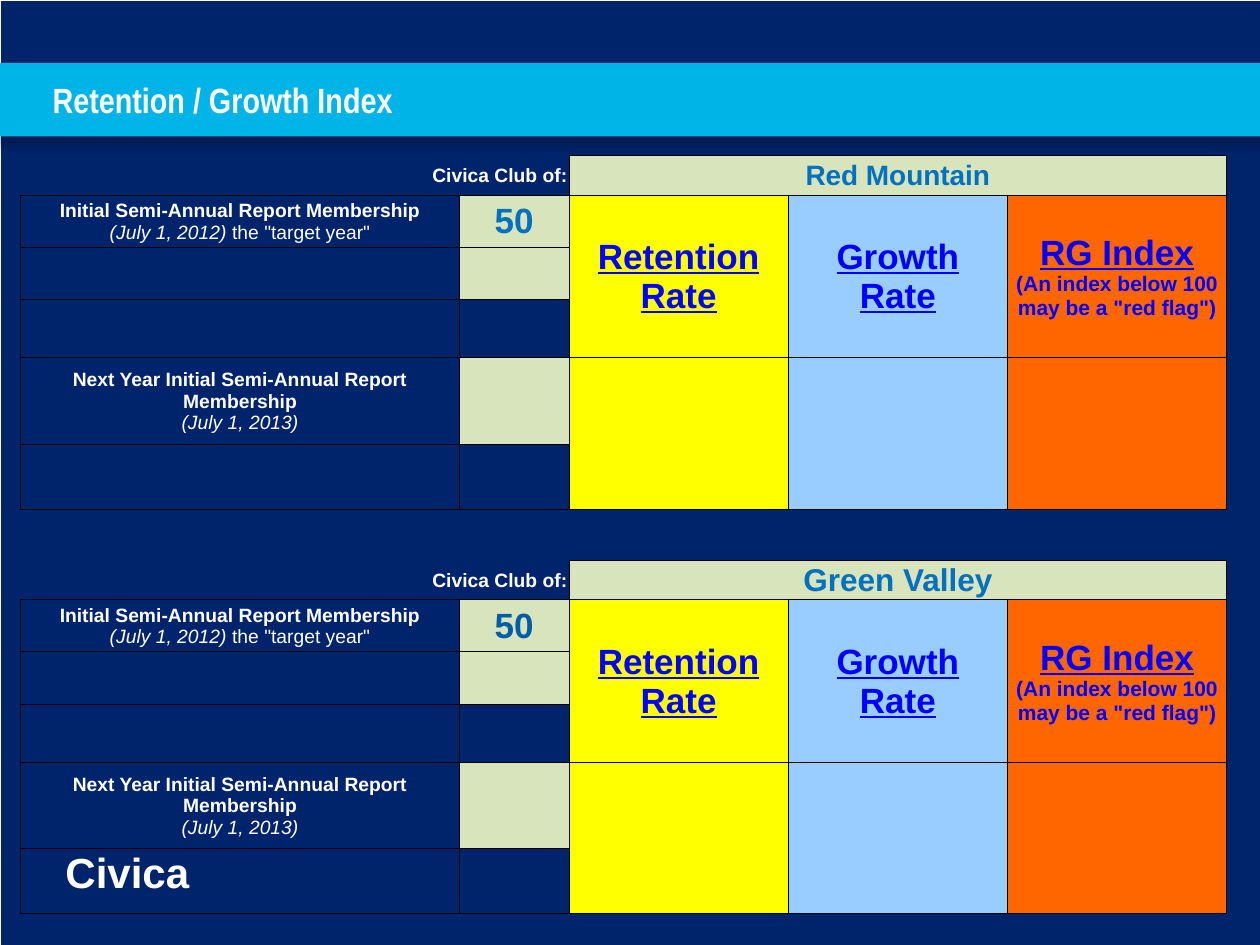
"""Build the Retention / Growth Index slide with one table for two clubs."""
from lxml import etree
from pptx import Presentation
from pptx import util as u
from pptx.dml import color
from pptx.enum import shapes, text
from pptx.oxml import ns

COLORS = {"navy": "00246C", "sky": "01B4E7", "white": "FFFFFF", "black": "000000",
          "green": "D7E4BC", "yellow": "FFFF00", "pale": "99CCFF", "orange": "FF6600",
          "blue": "0070C0", "royal": "005DAA", "link": "0000FF"}

STYLES = {
    "title": dict(name="Arial Narrow", size=20, bold=True, color="white"),
    "wordmark": dict(size=24, bold=True, color="white"),
    "label": dict(size=11, bold=True, color="white"),
    "date": dict(size=11, italic=True, color="white"),
    "plain": dict(size=11, color="white"),
    "measure": dict(size=20, bold=True, underline=True, color="link"),
    "warning": dict(size=12, bold=True, color="link"),
}

CLUBS = [
    dict(row=1, club="Red Mountain", club_size=16, members="50", members_color="blue"),
    dict(row=9, club="Green Valley", club_size=18, members="50", members_color="royal"),
]
CLUB_LABEL = [[("Civica Club of:", "label")]]
FIRST_YEAR = [[("Initial Semi-Annual Report Membership\n", "label"),
               ("(July 1, 2012) ", "date"), ("the \"target year\"", "plain")]]
NEXT_YEAR = [[("Next Year Initial Semi-Annual Report Membership\n", "label"),
              ("(July 1, 2013)", "date")]]
MEASURES = [
    ("yellow", [[("Retention Rate", "measure")]]),
    ("pale", [[("Growth", "measure")], [("Rate", "measure")]]),
    ("orange", [[("RG Index\n", "measure"),
                 ("(An index below 100\nmay be a \"red flag\")", "warning")]]),
]

YEAR_ROWS = [1.05, 1.05, 1.17, 1.75, 1.31]
ROWS = [1.23, 0.79, *YEAR_ROWS, 0.51, 0.52, 0.8, *YEAR_ROWS]
COLUMNS = [2.21] * 11
SIDES = {"l": "a:lnL", "r": "a:lnR", "t": "a:lnT", "b": "a:lnB"}
CELL_FORMAT = dict(vertical_anchor=text.MSO_ANCHOR.MIDDLE, margin_left=u.Cm(0.03),
                   margin_right=u.Cm(0.03), margin_top=u.Cm(0.03), margin_bottom=0)
FRAME_FORMAT = dict(margin_left=0, margin_right=0, margin_top=0, margin_bottom=0,
                    word_wrap=True, auto_size=text.MSO_AUTO_SIZE.NONE,
                    vertical_anchor=text.MSO_ANCHOR.MIDDLE)


def rgb(name):
    return color.RGBColor.from_string(COLORS[name])


def set_all(target, values):
    for attribute, value in values.items():
        setattr(target, attribute, value)


def write(frame, paragraphs, align):
    for index, runs in enumerate(paragraphs):
        paragraph = frame.add_paragraph() if index else frame.paragraphs[0]
        paragraph.alignment = align
        for words, style in runs:
            values = dict(name="Arial", bold=False, italic=False, underline=False)
            values.update(STYLES[style] if isinstance(style, str) else style)
            ink = values.pop("color")
            values["size"] = u.Pt(values["size"])
            for position, line in enumerate(words.split("\n")):
                if position:
                    paragraph.add_line_break()
                if line:
                    run = paragraph.add_run()
                    run.text = line
                    set_all(run.font, values)
                    run.font.color.rgb = rgb(ink)


def set_borders(cell, drawn):
    properties = cell._tc.get_or_add_tcPr()
    for position, (side, tag) in enumerate(SIDES.items()):
        line = etree.Element(ns.qn(tag), w=str(u.Pt(0.5)))
        if side in drawn:
            fill = etree.SubElement(line, ns.qn("a:solidFill"))
            etree.SubElement(fill, ns.qn("a:srgbClr"), val=COLORS["black"])
        else:
            etree.SubElement(line, ns.qn("a:noFill"))
        properties.insert(position, line)


def prepare(table):
    set_all(table, dict(first_row=False, horz_banding=False))
    for lines, sizes, attribute in ((table.columns, COLUMNS, "width"),
                                    (table.rows, ROWS, "height")):
        for line, size in zip(lines, sizes):
            setattr(line, attribute, u.Cm(size))
    for row in range(len(ROWS)):
        for column in range(len(COLUMNS)):
            cell = table.cell(row, column)
            set_all(cell, CELL_FORMAT)
            cell.fill.background()
            if row in (1, 9) and column < 5:
                drawn = "rb"
            else:
                drawn = {0: "", 7: "t", 8: "b" if column > 4 else ""}.get(row, "lrtb")
            set_borders(cell, drawn)
            paragraph = cell.text_frame.paragraphs[0]._p
            etree.SubElement(paragraph, ns.qn("a:endParaRPr"), sz="800")


def place(table, row, column, span, paragraphs=(), fill=None, align=text.PP_ALIGN.CENTER):
    cell = table.cell(row, column)
    if span != (1, 1):
        cell.merge(table.cell(row + span[0] - 1, column + span[1] - 1))
    if fill:
        cell.fill.solid()
        cell.fill.fore_color.rgb = rgb(fill)
    write(cell.text_frame, paragraphs, align)


def fill_club(table, row, club, club_size, members, members_color):
    name_style = dict(size=club_size, bold=True, color="blue")
    members_style = dict(size=20, bold=True, color=members_color)
    place(table, row, 0, (1, 5), CLUB_LABEL, align=text.PP_ALIGN.RIGHT)
    place(table, row, 5, (1, 6), [[(club, name_style)]], "green")
    year_lines = [(FIRST_YEAR, [[(members, members_style)]], "green"), ((), (), "green"),
                  ((), (), None), (NEXT_YEAR, (), "green"), ((), (), None)]
    for line, (label, value, fill) in enumerate(year_lines, row + 1):
        place(table, line, 0, (1, 4), label)
        place(table, line, 4, (1, 1), value, fill)
    for index, (fill, heading) in enumerate(MEASURES):
        column = 5 + 2 * index
        place(table, row + 1, column, (3, 2), heading, fill)
        place(table, row + 4, column, (2, 2), fill=fill)


def add_shadow(shape):
    effects = etree.SubElement(shape._element.spPr, ns.qn("a:effectLst"))
    shadow = etree.SubElement(effects, ns.qn("a:outerShdw"), blurRad=str(u.Pt(7)),
                              dist=str(u.Pt(4.8)), dir="5400000", rotWithShape="0")
    tint = etree.SubElement(shadow, ns.qn("a:srgbClr"), val=COLORS["black"])
    etree.SubElement(tint, ns.qn("a:alpha"), val="25000")


def main():
    deck = Presentation()
    set_all(deck, dict(slide_width=u.Cm(25.4), slide_height=u.Cm(19.05)))
    slide = deck.slides.add_slide(deck.slide_layouts[5])
    slide.background.fill.solid()
    slide.background.fill.fore_color.rgb = rgb("navy")
    items = slide.shapes

    wordmark = items.add_textbox(u.Cm(1.07), u.Cm(16.94), u.Cm(4.65), u.Cm(1.27))
    wordmark.text_frame.word_wrap = True
    write(wordmark.text_frame, [[("Civica", "wordmark")]], text.PP_ALIGN.LEFT)

    outline = items.add_shape(shapes.MSO_SHAPE.RECTANGLE, 0, 0,
                              deck.slide_width, deck.slide_height)
    outline.shadow.inherit = False
    outline.fill.background()
    outline.line.color.rgb = rgb("white")
    outline.line.width = u.Pt(0.13)

    band = items.add_shape(shapes.MSO_SHAPE.RECTANGLE, u.Cm(-0.2), u.Cm(1.27),
                           u.Cm(25.8), u.Cm(1.48))
    band.fill.solid()
    band.fill.fore_color.rgb = rgb("sky")
    band.line.fill.background()
    add_shadow(band)

    title = items.title
    set_all(title, dict(left=u.Cm(1.06), top=u.Cm(1.27), width=u.Cm(24.34), height=u.Cm(1.48)))
    set_all(title.text_frame, FRAME_FORMAT)
    write(title.text_frame, [[("Retention / Growth Index", "title")]], text.PP_ALIGN.LEFT)
    band._element.addnext(title._element)

    table = items.add_table(len(ROWS), len(COLUMNS), u.Cm(0.42), u.Cm(1.91),
                            u.Cm(sum(COLUMNS)), u.Cm(sum(ROWS))).table
    prepare(table)
    for club in CLUBS:
        fill_club(table, **club)
    deck.save("out.pptx")


if __name__ == "__main__":
    main()
